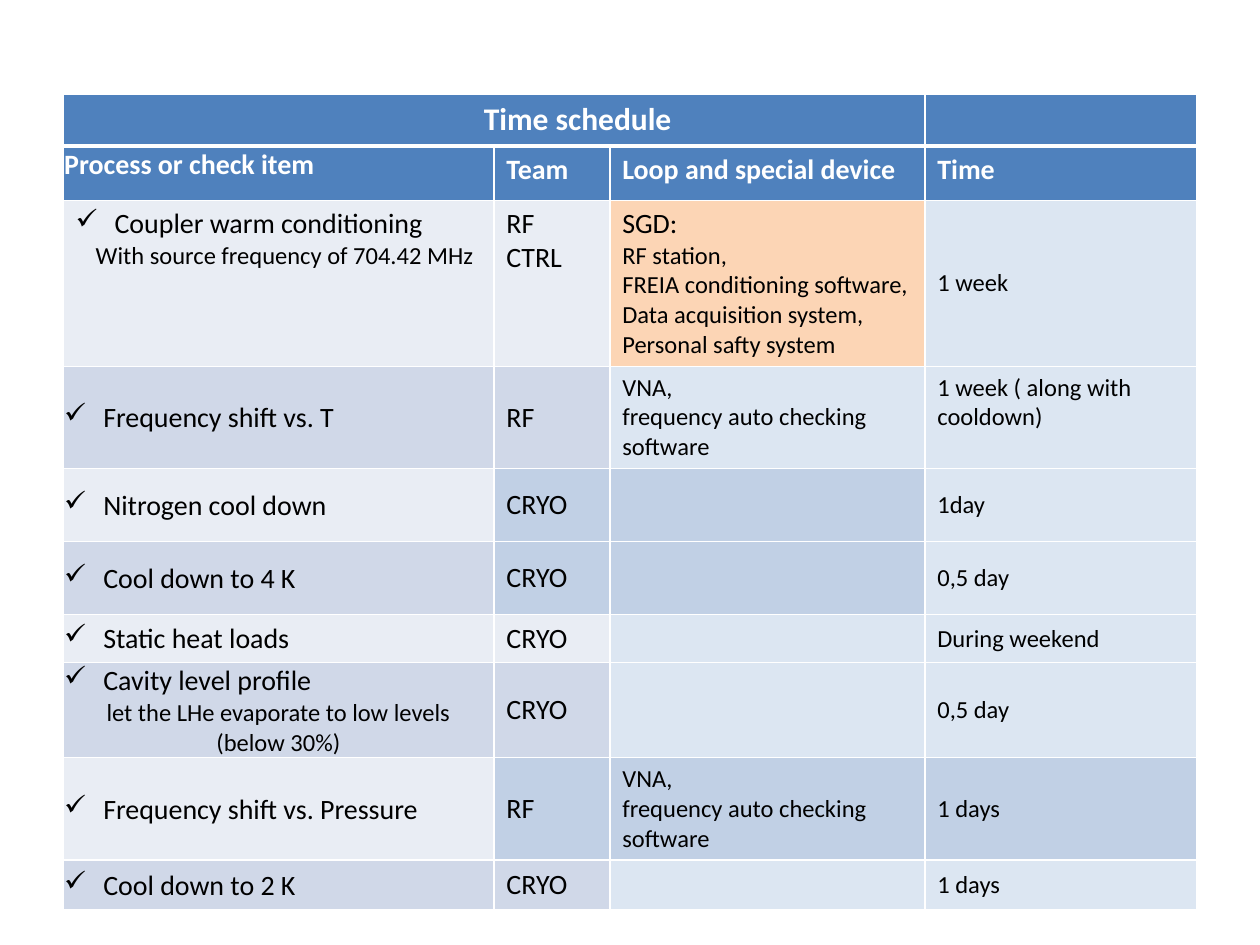
from lxml import etree
from pptx import Presentation
from pptx.dml.color import RGBColor
from pptx.enum import text
from pptx.oxml import ns
from pptx.util import Inches, Pt

THEME = {
    "font": "Calibri", "title": 18, "main": 16, "small": 14,
    "white": "FFFFFF", "ink": "000000", "header": "4F81BD",
    "light": "E9EDF4", "band": "D0D8E8",
    "pale": "DCE6F2", "mid": "C1D0E5", "peach": "FCD5B5",
}

# Content
TITLE = "Time schedule"
HEADINGS = ["Process or check item", "Team", "Loop and special device", "Time"]
VNA = ["VNA,", "frequency auto checking software"]
STATION = ["SGD:", "RF station,", "FREIA conditioning software,",
           "Data acquisition system,", "Personal safty system"]
# item lines, teams, devices, time, fills of the last three columns (None: row band)
STEPS = [
    (["Coupler warm conditioning", "With source frequency of 704.42 MHz"],
     ["RF", "CTRL"], STATION, "1 week", (None, "peach", "pale")),
    (["Frequency shift vs. T"], ["RF"], VNA,
     "1 week ( along with cooldown)", (None, "pale", "pale")),
    (["Nitrogen cool down"], ["CRYO"], [], "1day", ("mid", "mid", "pale")),
    (["Cool down to 4 K"], ["CRYO"], [], "0,5 day", ("mid", "mid", "pale")),
    (["Static heat loads"], ["CRYO"], [], "During weekend", (None, "pale", "pale")),
    (["Cavity level profile", "let the LHe evaporate to low levels", "(below 30%)"],
     ["CRYO"], [], "0,5 day", (None, "pale", "pale")),
    (["Frequency shift vs. Pressure"], ["RF"], VNA, "1 days", ("mid", "mid", "mid")),
    (["Cool down to 2 K"], ["CRYO"], [], "1 days", (None, "pale", "pale")),
]
COLUMN_WIDTHS = [3.42, 0.92, 2.5, 2.16]
ROW_HEIGHTS = [0.41, 0.43, 1.31, 0.81, 0.58, 0.58, 0.37, 0.75, 0.81, 0.4]

TOP, MIDDLE = text.MSO_ANCHOR.TOP, text.MSO_ANCHOR.MIDDLE
CENTER = text.PP_ALIGN.CENTER
TIGHT = {"margin_left": Inches(0.01), "margin_right": Inches(0.01),
         "margin_top": Inches(0.01), "margin_bottom": 0}


def set_borders(cell, bottom=1):
    properties = cell._tc.get_or_add_tcPr()
    for side, width in (("L", 1), ("R", 1), ("T", 1), ("B", bottom)):
        line = etree.SubElement(properties, ns.qn(f"a:ln{side}"), w=str(Pt(width)))
        fill = etree.SubElement(line, ns.qn("a:solidFill"))
        etree.SubElement(fill, ns.qn("a:srgbClr"), val=THEME["white"])


def indent(paragraph, left, first=0, bullet=None):
    properties = paragraph._p.get_or_add_pPr()
    properties.set("marL", str(Inches(left)))
    properties.set("indent", str(Inches(first)))
    if bullet:
        etree.SubElement(properties, ns.qn("a:buChar"), char=bullet)


def fill_cell(cell, lines, fill, color="ink", bold=False, bottom=1, **layout):
    """Style a cell and write (text, size) lines; return its paragraphs."""
    set_borders(cell, bottom)
    cell.fill.solid()
    cell.fill.fore_color.rgb = RGBColor.from_string(THEME[fill])
    for name, value in layout.items():
        setattr(cell, name, value)
    frame = cell.text_frame
    for number, (words, size) in enumerate(lines or [("", "small")]):
        paragraph = frame.add_paragraph() if number else frame.paragraphs[0]
        run = paragraph.add_run()
        run.text = words
        style = {"name": THEME["font"], "size": Pt(THEME[size]), "bold": bold}
        for name, value in style.items():
            setattr(run.font, name, value)
        run.font.color.rgb = RGBColor.from_string(THEME[color])
    return frame.paragraphs


def sized(lines, first, rest):
    return [(line, rest if number else first) for number, line in enumerate(lines)]


def main():
    deck = Presentation()
    deck.slide_width, deck.slide_height = Inches(10), Inches(7.5)
    slide = deck.slides.add_slide(deck.slide_layouts[6])
    schedule = slide.shapes.add_table(
        len(ROW_HEIGHTS), len(COLUMN_WIDTHS), Inches(0.5), Inches(0.75),
        Inches(sum(COLUMN_WIDTHS)), Inches(sum(ROW_HEIGHTS))).table
    for column, width in zip(schedule.columns, COLUMN_WIDTHS):
        column.width = Inches(width)
    for row, height in zip(schedule.rows, ROW_HEIGHTS):
        row.height = Inches(height)

    # Title row, with the title set right of the middle of its merged cell
    schedule.cell(0, 0).merge(schedule.cell(0, 2))
    for column, words in enumerate([TITLE, "", "", ""]):
        title = fill_cell(schedule.cell(0, column), [(words, "title")] if words else [],
                          "header", "white", True, bottom=3)[0]
        if words:
            title.alignment = CENTER
            indent(title, 1.33)

    # Column headings
    for column, heading in enumerate(HEADINGS):
        fill_cell(schedule.cell(1, column), [(heading, "main")], "header", "white", True,
                  **({} if column else TIGHT))

    # Steps
    for number, (item, teams, devices, time, fills) in enumerate(STEPS):
        row = number + 2
        band = "band" if number % 2 else "light"
        opening = number == 0
        anchor = TOP if opening else MIDDLE
        team_fill, device_fill, time_fill = (fill or band for fill in fills)

        name, *details = fill_cell(
            schedule.cell(row, 0), sized(item, "main", "small"), band,
            vertical_anchor=anchor, **({} if opening else TIGHT))
        indent(name, 0.31, -0.31, "✓")
        for detail in details:
            if opening:
                indent(detail, 0.16)
            else:
                detail.alignment = CENTER

        fill_cell(schedule.cell(row, 1), sized(teams, "main", "main"), team_fill,
                  vertical_anchor=anchor)
        fill_cell(schedule.cell(row, 2),
                  sized(devices, "main" if opening else "small", "small"), device_fill,
                  vertical_anchor=anchor)
        fill_cell(schedule.cell(row, 3), [(time, "small")], time_fill,
                  vertical_anchor=TOP if "along" in time else MIDDLE)

    deck.save("out.pptx")


if __name__ == "__main__":
    main()
